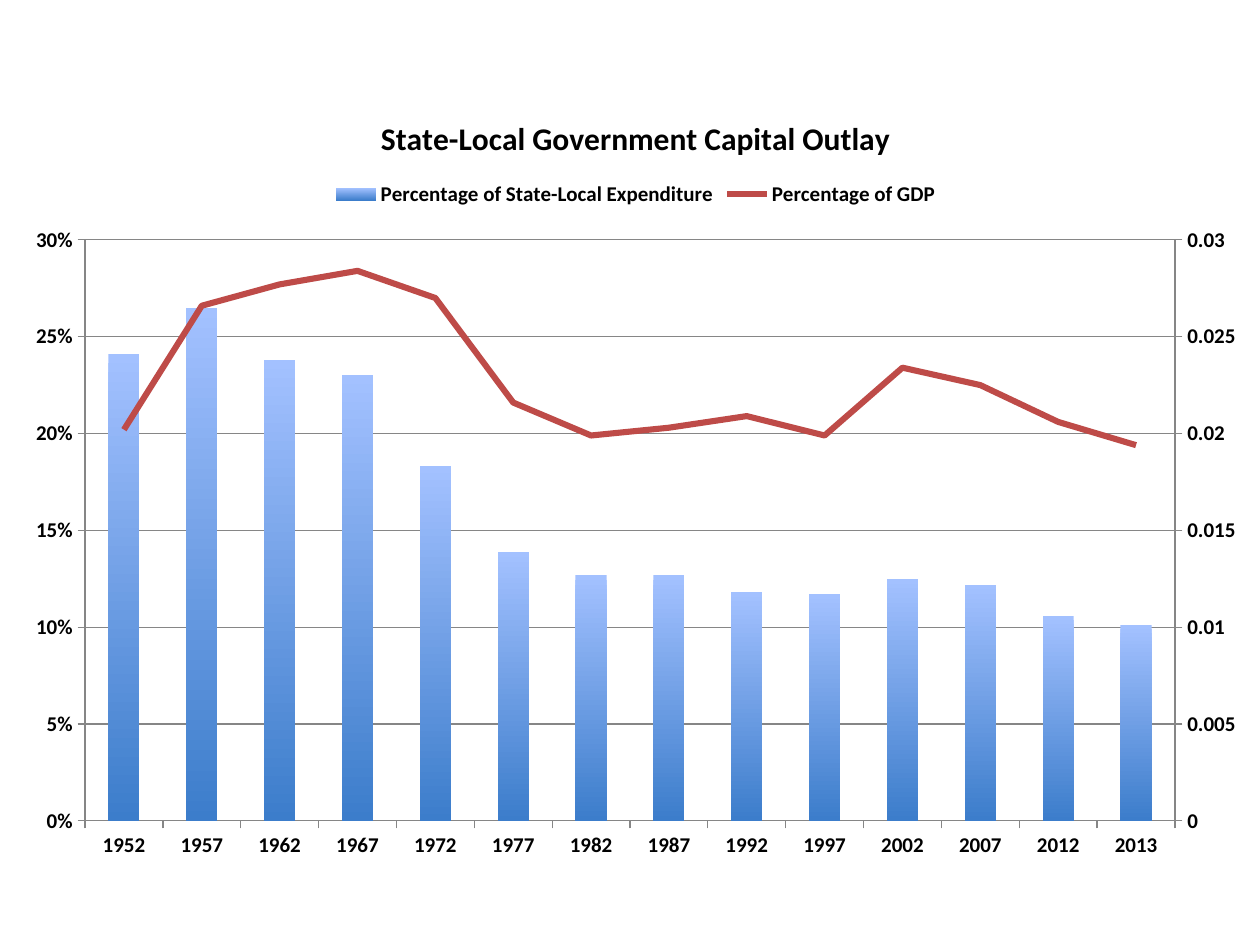
import copy
from dataclasses import dataclass

import lxml.etree
import pptx
import pptx.chart.axis
import pptx.chart.data
import pptx.dml.color
import pptx.enum.chart
import pptx.oxml
import pptx.oxml.ns
import pptx.util

qn = pptx.oxml.ns.qn
Inches = pptx.util.Inches
Pt = pptx.util.Pt


@dataclass(frozen=True)
class Measure:
    name: str
    number_format: str
    values: tuple[float, ...]


YEARS = (*range(1952, 2013, 5), 2013)
EXPENDITURE = Measure(
    "Percentage of State-Local Expenditure", "0%",
    (0.241, 0.265, 0.238, 0.23, 0.183, 0.139, 0.127,
     0.127, 0.118, 0.117, 0.125, 0.122, 0.106, 0.101))
GDP = Measure(
    "Percentage of GDP", "General",
    (0.0202, 0.0266, 0.0277, 0.0284, 0.027, 0.0216, 0.0199,
     0.0203, 0.0209, 0.0199, 0.0234, 0.0225, 0.0206, 0.0194))
PLOT_FRACTIONS = {"x": 0.059, "y": 0.193, "w": 0.873, "h": 0.739}
RIGHT_IDS = ("50010", "50020")


def color(value: str) -> pptx.dml.color.RGBColor:
    return pptx.dml.color.RGBColor.from_string(value)


def set_font(font, size: float, bold: bool = True) -> None:
    font.name = "Calibri"
    font.size = Pt(size)
    font.bold = bold
    font.color.rgb = color("000000")


def set_line(line, value: str, width: float) -> None:
    line.color.rgb = color(value)
    line.width = Pt(width)


def add_value(parent, tag: str, value: str):
    child = lxml.etree.SubElement(parent, qn(tag))
    child.set("val", value)
    return child


def style_axis(axis) -> None:
    axis.major_tick_mark = pptx.enum.chart.XL_TICK_MARK.OUTSIDE
    axis.minor_tick_mark = pptx.enum.chart.XL_TICK_MARK.NONE
    set_font(axis.tick_labels.font, 12)
    set_line(axis.format.line, "868686", 0.75)


def style_value_axis(axis, maximum: float, step: float, number_format: str) -> None:
    style_axis(axis)
    axis.minimum_scale = 0
    axis.maximum_scale = maximum
    axis.major_unit = step
    axis.tick_labels.number_format = number_format
    axis.tick_labels.number_format_is_linked = False


def place_plot(area) -> None:
    for old in area.findall(qn("c:layout")):
        area.remove(old)
    layout = lxml.etree.Element(qn("c:layout"))
    manual = lxml.etree.SubElement(layout, qn("c:manualLayout"))
    add_value(manual, "c:layoutTarget", "inner")
    for side in "xy":
        add_value(manual, f"c:{side}Mode", "edge")
    for side, fraction in PLOT_FRACTIONS.items():
        add_value(manual, f"c:{side}", str(fraction))
    area.insert(0, layout)


def move_to_line(area) -> None:
    bars = area.find(qn("c:barChart"))
    series = bars.findall(qn("c:ser"))[1]
    invert = series.find(qn("c:invertIfNegative"))
    if invert is not None:
        series.remove(invert)
    line = pptx.oxml.parse_xml(
        f'<c:lineChart {pptx.oxml.ns.nsdecls("c")}>'
        '<c:grouping val="standard"/><c:varyColors val="0"/></c:lineChart>')
    line.append(series)
    add_value(line, "c:marker", "1")
    for axis_id in RIGHT_IDS:
        add_value(line, "c:axId", axis_id)
    bars.addnext(line)


def add_right_axes(area) -> None:
    category = copy.deepcopy(area.find(qn("c:catAx")))
    value = copy.deepcopy(area.find(qn("c:valAx")))
    pairs = ((category, *RIGHT_IDS), (value, *reversed(RIGHT_IDS)))
    for element, own_id, other_id in pairs:
        element.find(qn("c:axId")).set("val", own_id)
        element.find(qn("c:crossAx")).set("val", other_id)
    value.find(qn("c:axPos")).set("val", "r")
    value.find(qn("c:crosses")).set("val", "max")
    area.find(qn("c:valAx")).addnext(value)
    value.addnext(category)
    pptx.chart.axis.CategoryAxis(category).visible = False
    right = pptx.chart.axis.ValueAxis(value)
    right.has_major_gridlines = False
    style_value_axis(right, 0.03, 0.005, GDP.number_format)


def add_outlay_chart(page) -> None:
    data = pptx.chart.data.CategoryChartData()
    data.categories = [str(year) for year in YEARS]
    for measure in (EXPENDITURE, GDP):
        data.add_series(measure.name, measure.values, measure.number_format)
    chart = page.shapes.add_chart(
        pptx.enum.chart.XL_CHART_TYPE.COLUMN_CLUSTERED,
        Inches(0.09), Inches(0.7), Inches(9.91), Inches(6.24), data).chart
    set_font(chart.font, 10, False)

    chart.has_title = True
    chart.chart_title.text_frame.text = "State-Local Government Capital Outlay"
    set_font(chart.chart_title.text_frame.paragraphs[0].runs[0].font, 18)
    chart.has_legend = True
    chart.legend.position = pptx.enum.chart.XL_LEGEND_POSITION.TOP
    chart.legend.include_in_layout = False
    set_font(chart.legend.font, 12)

    style_axis(chart.category_axis)
    style_value_axis(chart.value_axis, 0.3, 0.05, EXPENDITURE.number_format)
    chart.value_axis.has_major_gridlines = True
    set_line(chart.value_axis.major_gridlines.format.line, "868686", 0.75)

    area = chart.element.find(f".//{qn('c:plotArea')}")
    place_plot(area)
    move_to_line(area)
    add_right_axes(area)

    bars, line = chart.plots
    bars.gap_width = 150
    bars.vary_by_categories = False
    fill = bars.series[0].format.fill
    fill.gradient()
    fill.gradient_angle = 270
    for stop, value in zip(fill.gradient_stops, ("A3C1FF", "3C7DCB")):
        stop.color.rgb = color(value)
    trend = line.series[0]
    trend.smooth = False
    trend.marker.style = pptx.enum.chart.XL_MARKER_STYLE.NONE
    set_line(trend.format.line, "BE4B48", 3.5)


def main() -> None:
    """Build the capital outlay slide."""
    deck = pptx.Presentation()
    deck.slide_width = Inches(10)
    deck.slide_height = Inches(7.5)
    page = deck.slides.add_slide(deck.slide_layouts[6])
    add_outlay_chart(page)
    deck.save("out.pptx")


if __name__ == "__main__":
    main()
